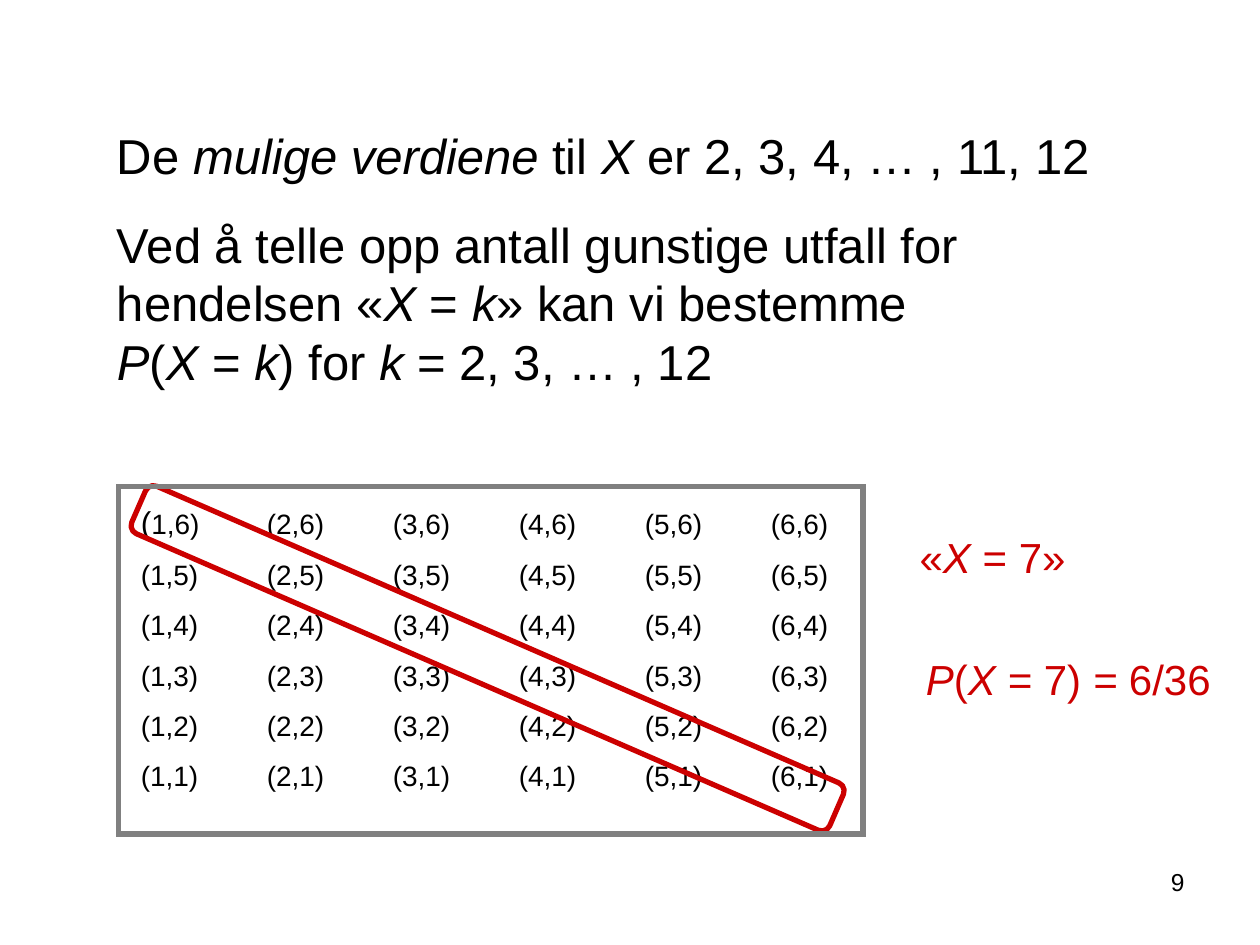
from lxml import etree
from pptx import Presentation
from pptx import util as u
from pptx.dml.color import RGBColor
from pptx.enum import shapes, text
from pptx.oxml import ns

BLACK = RGBColor(0x00, 0x00, 0x00)
RED = RGBColor(0xCC, 0x00, 0x00)
GRAY = RGBColor(0x80, 0x80, 0x80)
FONT = "Arial"


def add_run(para, words, size=16, color=BLACK, italic=False):
    run = para.add_run()
    run.text = words
    font = run.font
    font.name, font.size, font.italic = FONT, u.Pt(size), italic
    font.color.rgb = color


def write(para, words, **style):
    """Fill a paragraph; asterisks switch italics, a newline breaks the line."""
    for i, part in enumerate(words.split("*")):
        for j, line in enumerate(part.split("\n")):
            if j:
                para.add_line_break()
            if line:
                add_run(para, line, italic=i % 2 == 1, **style)


def set_tabs(para, count, step=1):
    """Put left tab stops at equal steps, in inches."""
    tabs = etree.SubElement(para._p.get_or_add_pPr(), ns.qn("a:tabLst"))
    for i in range(1, count + 1):
        etree.SubElement(tabs, ns.qn("a:tab"),
                         pos=str(u.Inches(i * step)), algn="l")


class Page:
    def __init__(self, slide, line=3):
        self.slide = slide
        self.line = line

    def box(self, at, paras, align=text.PP_ALIGN.LEFT, gap=0, **style):
        frame = self.slide.shapes.add_textbox(*map(u.Inches, at)).text_frame
        frame.word_wrap = True
        for i, words in enumerate(paras):
            para = frame.add_paragraph() if i else frame.paragraphs[0]
            para.alignment = align
            if i:
                para.space_before = u.Pt(gap)
            if "\t" in words:
                set_tabs(para, words.count("\t"))
            write(para, words, **style)
        return frame

    def outline(self, kind, at, color, turn=0, join="round"):
        shape = self.slide.shapes.add_shape(kind, *map(u.Inches, at))
        shape.shadow.inherit = False
        shape.fill.background()
        shape.line.color.rgb = color
        shape.line.width = u.Pt(self.line)
        shape.rotation = turn
        etree.SubElement(shape.line._get_or_add_ln(), ns.qn(f"a:{join}"))


def main():
    deck = Presentation()
    deck.slide_width, deck.slide_height = u.Inches(10), u.Inches(7.5)
    page = Page(deck.slides.add_slide(deck.slide_layouts[6]))

    # Outcomes of two dice, highest second die on top
    rows = ["\t".join(f"({a},{b})" for a in range(1, 7))
            for b in range(6, 0, -1)]
    grid = page.box((1.02, 3.94, 5.75, 2.96), rows, gap=9.6)
    first = grid.paragraphs[0].runs[0]
    first.text = "("
    first.font.size = u.Pt(18)
    write(grid.paragraphs[0], rows[0][1:])

    # Ring around the sum 7, and frame
    page.outline(shapes.MSO_SHAPE.ROUNDED_RECTANGLE,
                 (0.85, 5.02, 6.04, 0.41), RED, turn=23.5)
    page.outline(shapes.MSO_SHAPE.RECTANGLE, (0.94, 3.86, 5.91, 2.76), GRAY,
                 join="miter")

    # Main text
    page.box((0.83, 0.95, 8.51, 2.25), [
        "De *mulige verdiene *til *X* er 2, 3, 4, … , 11, 12",
        "Ved å telle opp antall gunstige utfall for hendelsen "
        "«*X *= *k*» kan vi bestemme\n*P*(*X* = *k*) for* k* = 2, 3, … , 12",
    ], size=28, gap=16.8)

    # Event and its probability
    page.box((7.2, 4.17, 1.49, 0.5), ["«*X *= 7»"], size=24, color=RED)
    page.box((7.25, 5.14, 2.56, 0.5), ["*P*(*X = *7) *= *6/36"],
             size=24, color=RED)

    # Page number
    page.box((7.17, 6.83, 2.33, 0.52), ["9"],
             align=text.PP_ALIGN.RIGHT, size=14)

    deck.save("out.pptx")


if __name__ == "__main__":
    main()
